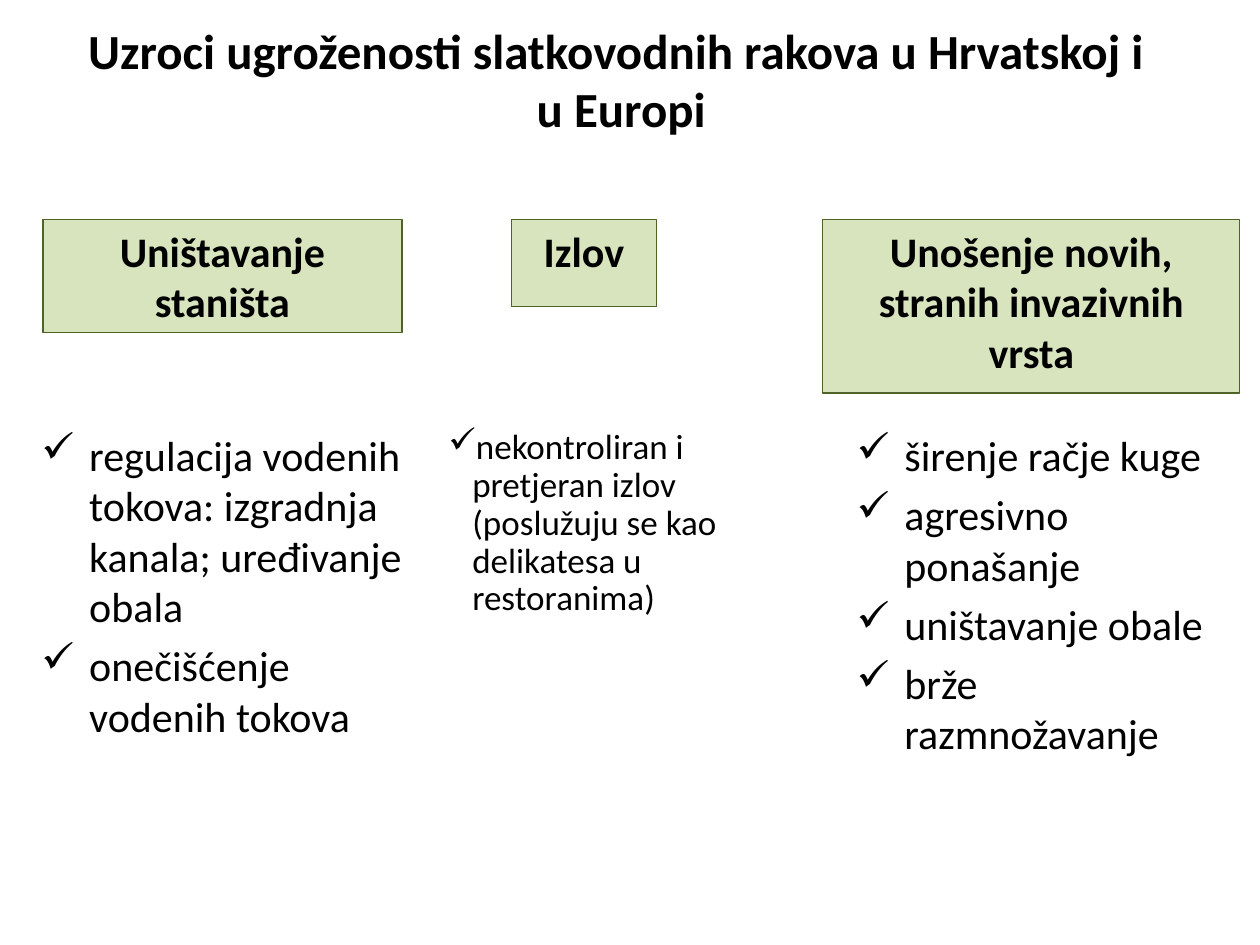
from lxml.etree import SubElement
from pptx import Presentation
from pptx.dml.color import RGBColor
from pptx.enum.shapes import MSO_SHAPE
from pptx.enum.text import MSO_ANCHOR, PP_ALIGN
from pptx.oxml.ns import qn
from pptx.util import Inches, Pt

COLUMN = ROW = Inches(0.1)
BLACK, LIGHT_GREEN, DARK_GREEN = "000000", "D7E4BD", "4F6228"
CAUSE_TOP, DETAIL_TOP, DETAIL_HEIGHT = 17.4, 33.6, 40.3

TITLE = "Uzroci ugroženosti slatkovodnih rakova u Hrvatskoj i \vu Europi"
CAUSES = [
    dict(
        cause="Uništavanje staništa",
        cause_span=(3.4, 28.5, 9),
        details=[
            "regulacija vodenih tokova: izgradnja kanala; uređivanje obala",
            "onečišćenje vodenih tokova",
        ],
        detail_span=(2.3, 30.8),
        detail_format=dict(size=24, indent=3.8, before=5),
    ),
    dict(
        cause="Izlov",
        cause_span=(40.6, 11.5, 6.9),
        details=["nekontroliran i pretjeran izlov (poslužuju se kao delikatesa u restoranima)"],
        detail_span=(34.6, 30.8),
        detail_format=dict(size=20, indent=1.9, before=7.5, spacing=0.9),
    ),
    dict(
        cause="Unošenje novih, stranih invazivnih vrsta",
        cause_span=(65.3, 33.1, 13.8),
        details=["širenje račje kuge", "agresivno ponašanje", "uništavanje obale", "brže razmnožavanje"],
        detail_span=(67, 29.6),
        detail_format=dict(size=24, indent=3.8, before=5),
    ),
]


def color(value):
    return RGBColor.from_string(value)


def place(box):
    left, top, width, height = box
    return [round(n) for n in (left * COLUMN, top * ROW, width * COLUMN, height * ROW)]


def add_check(paragraph, indent):
    properties = paragraph._p.get_or_add_pPr()
    properties.set("marL", str(round(indent * COLUMN)))
    properties.set("indent", str(-round(indent * COLUMN)))
    SubElement(properties, qn("a:buChar")).set("char", "✓")


def write(holder, texts, size=24, bold=False, align=PP_ALIGN.LEFT, before=0, spacing=None, indent=None):
    frame = holder.text_frame
    frame.word_wrap = True
    frame.vertical_anchor = MSO_ANCHOR.TOP
    for number, text in enumerate(texts):
        paragraph = frame.add_paragraph() if number else frame.paragraphs[0]
        paragraph.text = text
        paragraph.alignment = align
        paragraph.space_before = Pt(before)
        if spacing:
            paragraph.line_spacing = spacing
        if indent:
            add_check(paragraph, indent)
        for run in paragraph.runs:
            run.font.name = "Calibri"
            run.font.size = Pt(size)
            run.font.bold = bold
            run.font.color.rgb = color(BLACK)


def add_title(slide, box):
    title = slide.shapes.add_textbox(*place(box))
    write(title, [TITLE], size=28, bold=True, align=PP_ALIGN.CENTER)


def add_cause(slide, box, cause):
    label = slide.shapes.add_shape(MSO_SHAPE.RECTANGLE, *place(box))
    label.shadow.inherit = False
    label.fill.solid()
    label.fill.fore_color.rgb = color(LIGHT_GREEN)
    label.line.color.rgb = color(DARK_GREEN)
    label.line.width = Pt(0.75)
    write(label, [cause], bold=True, align=PP_ALIGN.CENTER, before=5)


def add_details(slide, box, details, detail_format):
    checklist = slide.shapes.add_textbox(*place(box))
    write(checklist, details, **detail_format)


def main():
    deck = Presentation()
    deck.slide_width, deck.slide_height = 100 * COLUMN, 75 * ROW
    slide = deck.slides.add_slide(deck.slide_layouts[6])
    add_title(slide, (0, 1.1, 98.6, 14.7))
    for column in CAUSES:
        left, width, height = column["cause_span"]
        add_cause(slide, (left, CAUSE_TOP, width, height), column["cause"])
        left, width = column["detail_span"]
        add_details(slide, (left, DETAIL_TOP, width, DETAIL_HEIGHT), column["details"], column["detail_format"])
    deck.save("out.pptx")


if __name__ == "__main__":
    main()
